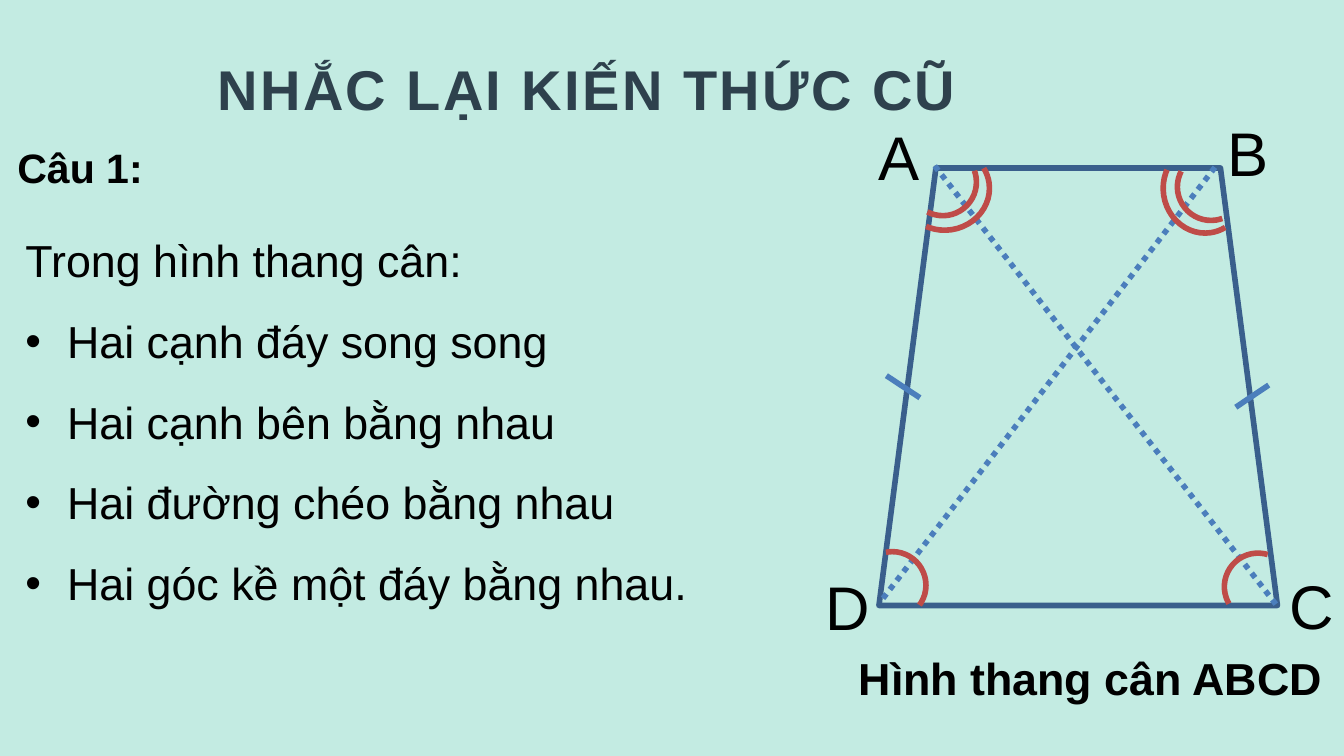
"""Build a review slide on the properties of an isosceles trapezoid."""
from typing import NamedTuple, Optional

from lxml import etree
from pptx import Presentation
from pptx.dml.color import RGBColor
from pptx.enum.dml import MSO_LINE
from pptx.enum.shapes import MSO_CONNECTOR, MSO_SHAPE
from pptx.enum.text import MSO_ANCHOR, MSO_AUTO_SIZE, PP_ALIGN
from pptx.oxml.ns import qn
from pptx.util import Inches, Pt

STRAIGHT = MSO_CONNECTOR.STRAIGHT
ARC, TRAPEZOID = MSO_SHAPE.ARC, MSO_SHAPE.TRAPEZOID
DOTTED = MSO_LINE.ROUND_DOT
TOP, CENTER = MSO_ANCHOR.TOP, PP_ALIGN.CENTER
FIT_SHAPE = MSO_AUTO_SIZE.SHAPE_TO_FIT_TEXT

MINT = RGBColor(0xC3, 0xEB, 0xE2)
SLATE = RGBColor(0x2E, 0x41, 0x4D)
NAVY = RGBColor(0x3A, 0x5F, 0x8C)
BLUE = RGBColor(0x4B, 0x7E, 0xBC)
RED = RGBColor(0xBF, 0x4C, 0x48)
BLACK = RGBColor(0, 0, 0)

FONT = "Arial"
STROKE = Pt(6)
HANG = Inches(0.62)
ARC_END = 21.716


class Label(NamedTuple):
    lines: list[str]
    left: float
    top: float
    width: float
    height: float
    size: int
    bold: bool = False
    wrap: bool = False
    spacing: Optional[float] = None


class Segment(NamedTuple):
    x1: float
    y1: float
    x2: float
    y2: float
    dash: Optional[MSO_LINE] = None


class Angle(NamedTuple):
    left: float
    top: float
    width: float = 1
    height: float = 1
    rotation: float = 0
    start: float = 155.375


LABELS = [
    Label(["A"], 12.98, 1.72, 0.82, 1.21, 66),
    Label(["B"], 18.17, 1.66, 0.82, 1.21, 66),
    Label(["D"], 12.18, 8.42, 0.87, 1.21, 66),
    Label(["C"], 19.09, 8.4, 0.87, 1.21, 66),
    Label(["Hình thang cân ABCD"], 12.68, 9.63, 7.18, 0.91, 48, bold=True),
    Label(["Câu 1:"], 0.16, 1.71, 2.34, 1.07, 44, True, True, 1.5),
    Label(["Trong hình thang cân:", "Hai cạnh đáy song song", "Hai cạnh bên bằng nhau",
           "Hai đường chéo bằng nhau", "Hai góc kề một đáy bằng nhau."],
          0.28, 3.02, 12.41, 6.01, 48, wrap=True, spacing=1.5),
]
SEGMENTS = [
    Segment(13.19, 5.59, 13.69, 5.92),
    Segment(18.88, 5.73, 18.39, 6.06),
    Segment(13.91, 2.47, 19, 9.01, DOTTED),
    Segment(18.08, 2.49, 13.09, 8.97, DOTTED),
]
ANGLES = [
    Angle(12.78, 8.21),
    Angle(18.22, 8.23, rotation=250.7),
    Angle(13.53, 2.21, rotation=81.3),
    Angle(13.46, 2.16, 1.22, 1.31, 81.3, 149.993),
    Angle(17.52, 2.28, rotation=171.3),
    Angle(17.31, 2.16, 1.22, 1.31, 171.3, 149.993),
]


def style_run(r, size: int, bold: bool, color: RGBColor) -> None:
    r.font.name, r.font.size, r.font.bold = FONT, Pt(size), bold
    r.font.color.rgb = color


def add_bullet(p) -> None:
    pPr = p._p.get_or_add_pPr()
    pPr.set("marL", str(HANG))
    pPr.set("indent", str(-HANG))
    etree.SubElement(pPr, qn("a:buFont")).set("typeface", FONT)
    etree.SubElement(pPr, qn("a:buChar")).set("char", "•")


def add_title(s, text: str) -> None:
    sp = s.shapes.title
    sp.left, sp.top, sp.width, sp.height = map(Inches, (1.01, 0.76, 15.45, 0.99))
    tf = sp.text_frame
    tf.text = text
    tf.margin_left = tf.margin_right = tf.margin_top = tf.margin_bottom = 0
    tf.vertical_anchor, tf.auto_size = TOP, FIT_SHAPE
    p = tf.paragraphs[0]
    p.alignment, p.line_spacing = CENTER, Pt(75.6)
    r = p.runs[0]
    style_run(r, 60, True, SLATE)
    r.font._element.set("spc", "260")


def add_label(s, label: Label) -> None:
    box = map(Inches, (label.left, label.top, label.width, label.height))
    tf = s.shapes.add_textbox(*box).text_frame
    tf.word_wrap, tf.auto_size = label.wrap, FIT_SHAPE
    tf.text = "\n".join(label.lines)
    for i, p in enumerate(tf.paragraphs):
        p.line_spacing = label.spacing
        if i:
            add_bullet(p)
        style_run(p.runs[0], label.size, label.bold, BLACK)


def add_outline(s, kind: MSO_SHAPE, box: tuple[float, ...], color: RGBColor,
                adjustments: list[float], rotation: float = 0) -> None:
    sp = s.shapes.add_shape(kind, *map(Inches, box))
    for i, value in enumerate(adjustments):
        sp.adjustments[i] = value
    sp.rotation = rotation
    sp.shadow.inherit = False
    sp.fill.background()
    sp.line.color.rgb, sp.line.width = color, STROKE


def add_segment(s, seg: Segment) -> None:
    cxn = s.shapes.add_connector(STRAIGHT, *map(Inches, seg[:4]))
    cxn.line.color.rgb, cxn.line.width = BLUE, STROKE
    if seg.dash:
        cxn.line.dash_style = seg.dash
    etree.SubElement(cxn._element.spPr, qn("a:effectLst"))


def main() -> None:
    prs = Presentation()
    prs.slide_width, prs.slide_height = Inches(20), Inches(11.25)
    s = prs.slides.add_slide(prs.slide_layouts[5])
    s.background.fill.solid()
    s.background.fill.fore_color.rgb = MINT
    add_title(s, "NHẮC LẠI KIẾN THỨC CŨ")
    add_outline(s, TRAPEZOID, (13.08, 2.5, 5.93, 6.51), NAVY, [0.143])
    for seg in SEGMENTS:
        add_segment(s, seg)
    for angle in ANGLES:
        add_outline(s, ARC, angle[:4], RED, [angle.start, ARC_END], angle.rotation)
    for label in LABELS:
        add_label(s, label)
    prs.save("out.pptx")


if __name__ == "__main__":
    main()
